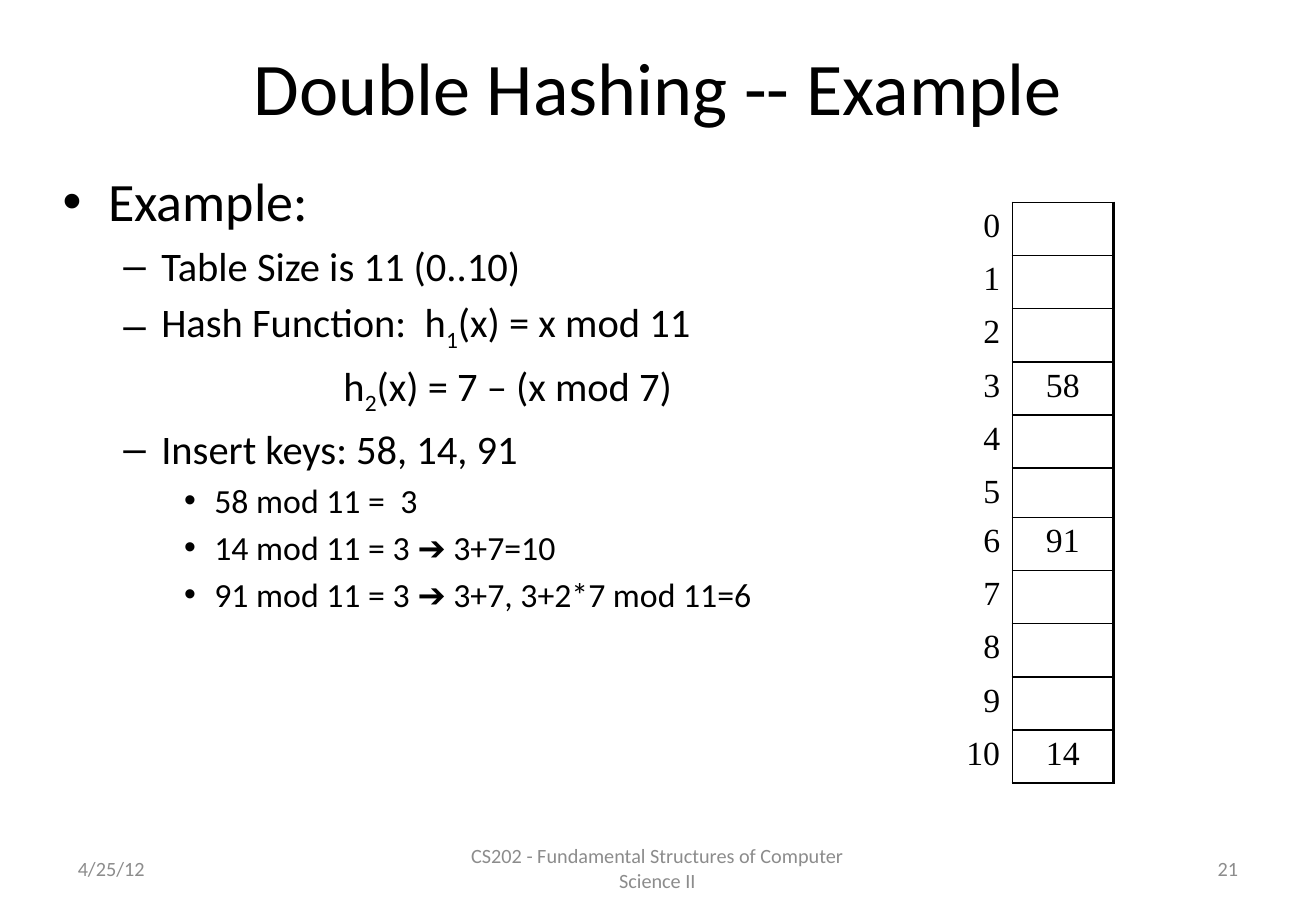
from dataclasses import dataclass

from lxml.etree import SubElement
from pptx import Presentation
from pptx.dml.color import RGBColor
from pptx.enum.text import MSO_ANCHOR, PP_ALIGN
from pptx.oxml import parse_xml
from pptx.oxml.ns import nsdecls, qn
from pptx.util import Pt

PX = 9525  # EMU in one px, 96 px to the inch


@dataclass(frozen=True)
class Theme:
    sans: str = "Calibri"
    serif: str = "Times New Roman"
    ink: str = "000000"
    gray: str = "8C8C8C"
    title: int = 44
    levels: tuple = (32, 24, 20)
    cell: int = 20
    foot: int = 12
    thin: float = 1
    thick: float = 2.25


def apply(item, **values):
    for name, value in values.items():
        setattr(item, name, value)


class Page:
    def __init__(self, deck, theme):
        self.theme = theme
        self.slide = deck.slides.add_slide(deck.slide_layouts[6])

    def fill(self, para, text, size, face, color):
        """Fill a paragraph; parts between bars are subscripts."""
        for i, part in enumerate(text.split("|")):
            run = para.add_run()
            run.text = part
            apply(run.font, name=face, size=Pt(size))
            run.font.color.rgb = RGBColor.from_string(color)
            if i % 2:
                run._r.get_or_add_rPr().set("baseline", "-25000")

    def space(self, para):
        before = SubElement(para._p.get_or_add_pPr(), qn("a:spcBef"))
        SubElement(before, qn("a:spcPct")).set("val", "20000")

    def frame(self, box, anchor):
        shape = self.slide.shapes.add_textbox(*(n * PX for n in box))
        apply(shape.text_frame, word_wrap=True, vertical_anchor=anchor)
        return shape.text_frame

    def label(self, box, text, size, color, align):
        para = self.frame(box, MSO_ANCHOR.MIDDLE).paragraphs[0]
        para.alignment = align
        self.fill(para, text, size, self.theme.sans, color)

    def outline(self, box, items):
        body = self.frame(box, MSO_ANCHOR.TOP)
        for i, (level, mark, left, hang, text) in enumerate(items):
            para = body.add_paragraph() if i else body.paragraphs[0]
            para.level = level
            props = para._p.get_or_add_pPr()
            props.set("marL", str(left * PX))
            props.set("indent", str(-hang * PX))
            self.space(para)
            if mark:
                SubElement(props, qn("a:buFont")).set("typeface", "Arial")
                SubElement(props, qn("a:buChar")).set("char", mark)
            else:
                SubElement(props, qn("a:buNone"))
            self.fill(para, text, self.theme.levels[level],
                      self.theme.sans, self.theme.ink)

    def border(self, cell, sides):
        props = cell._tc.get_or_add_tcPr()
        for i, (side, width) in enumerate(sides.items()):
            props.insert(i, parse_xml(
                f'<a:ln{side} {nsdecls("a")} w="{int(Pt(width))}"><a:solidFill>'
                f'<a:srgbClr val="{self.theme.ink}"/></a:solidFill></a:ln{side}>'))

    def slots(self, left, top, widths, heights, keys):
        theme = self.theme
        box = (left, top, sum(widths), sum(heights))
        table = self.slide.shapes.add_table(
            len(heights), len(widths), *(n * PX for n in box)).table
        apply(table, first_row=False, horz_banding=False)
        for col, width in zip(table.columns, widths):
            col.width = width * PX
        edges = ({"R": theme.thin},
                 {"L": theme.thin, "R": theme.thick,
                  "T": theme.thin, "B": theme.thin})
        aligns = (PP_ALIGN.RIGHT, PP_ALIGN.CENTER)
        for i, height in enumerate(heights):
            table.rows[i].height = height * PX
            texts = (str(i), keys.get(i, ""))
            for j, (text, align, sides) in enumerate(zip(texts, aligns, edges)):
                cell = table.cell(i, j)
                apply(cell, margin_top=4 * PX, margin_bottom=3 * PX)
                cell.fill.background()
                self.border(cell, sides)
                if text:
                    para = cell.text_frame.paragraphs[0]
                    para.alignment = align
                    self.space(para)
                    self.fill(para, text, theme.cell, theme.serif, theme.ink)


def main():
    deck = Presentation()
    apply(deck, slide_width=1040 * PX, slide_height=720 * PX)
    theme = Theme()
    page = Page(deck, theme)

    # Title
    page.label((52, 24, 936, 88), "Double Hashing -- Example",
               theme.title, theme.ink, PP_ALIGN.CENTER)

    # Outline: level, bullet, left indent, hang, text
    head, dash, dot = (0, "•", 36, 36), (1, "–", 78, 30), (2, "•", 120, 24)
    page.outline((40, 128, 648, 536), [
        (*head, "Example:"),
        (*dash, "Table Size is 11 (0..10)"),
        (*dash, "Hash Function:  h|1|(x) = x mod 11"),
        (1, None, 222, 0, "h|2|(x) = 7 – (x mod 7)"),
        (*dash, "Insert keys: 58, 14, 91"),
        (*dot, "58 mod 11 =  3"),
        (*dot, "14 mod 11 = 3 ➔ 3+7=10"),
        (*dot, "91 mod 11 = 3 ➔ 3+7, 3+2*7 mod 11=6"),
    ])

    # Footer
    for left, width, text, align in (
            (52, 243, "4/25/12", PP_ALIGN.LEFT),
            (355, 329, "CS202 - Fundamental Structures of Computer Science II",
             PP_ALIGN.CENTER),
            (745, 243, "21", PP_ALIGN.RIGHT)):
        page.label((left, 667, width, 38), text, theme.foot, theme.gray, align)

    # Hash table
    heights = [38 if i == 5 else 42 for i in range(11)]
    page.slots(744, 160, (56, 80), heights, {3: "58", 6: "91", 10: "14"})

    deck.save("out.pptx")


if __name__ == "__main__":
    main()
